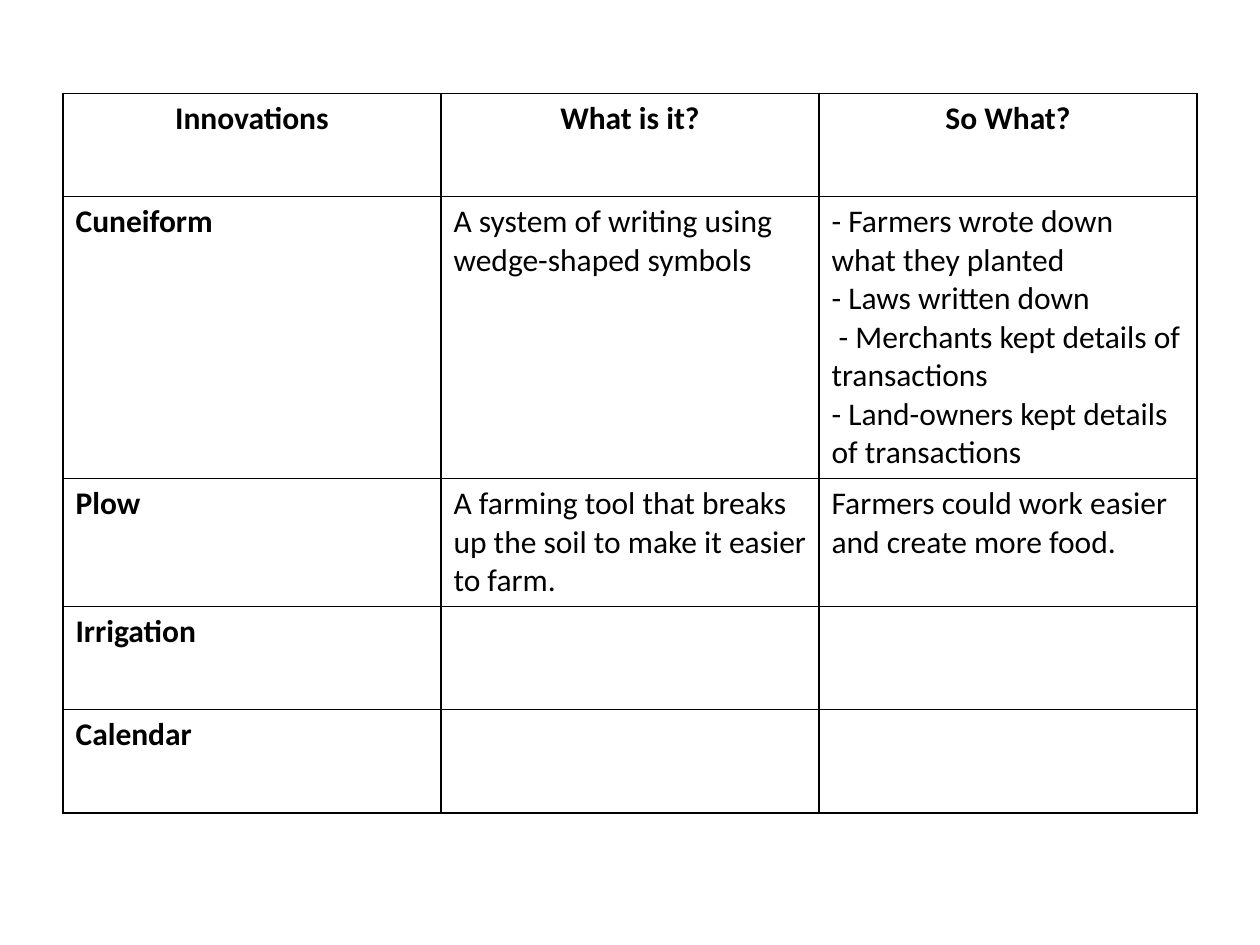
from dataclasses import dataclass

from lxml import etree
from pptx import Presentation
from pptx.dml.color import RGBColor
from pptx.enum import text
from pptx.oxml.ns import qn
from pptx.util import Inches, Pt


@dataclass(frozen=True)
class Theme:
    font: str = "Calibri"
    size: int = 18
    ink: str = "000000"
    border_width: int = 1


THEME = Theme()

HEADINGS = ["Innovations", "What is it?", "So What?"]
INNOVATIONS = [
    ["Cuneiform",
     "A system of writing using wedge-shaped symbols",
     "- Farmers wrote down what they planted\n"
     "- Laws written down\n"
     " - Merchants kept details of transactions\n"
     "- Land-owners kept details of transactions"],
    ["Plow",
     "A farming tool that breaks up the soil to make it easier to farm.",
     "Farmers could work easier and create more food."],
    ["Irrigation", "", ""],
    ["Calendar", "", ""],
]
ROW_HEIGHT = Inches(0.82)
CUNEIFORM_HEIGHT = Inches(1.8)


def write_text(frame, content, bold=False, align=text.PP_ALIGN.LEFT):
    frame.text = content
    for paragraph in frame.paragraphs:
        paragraph.alignment = align
        font = paragraph.font
        for run in paragraph.runs:
            font = run.font
            font.bold = bold
            font.color.rgb = RGBColor.from_string(THEME.ink)
        font.name = THEME.font
        font.size = Pt(THEME.size)


def add_borders(cell):
    """Draw all four sides; borders must precede the fill in the cell's XML."""
    properties = cell._tc.get_or_add_tcPr()
    for position, side in enumerate(("a:lnL", "a:lnR", "a:lnT", "a:lnB")):
        line = etree.Element(qn(side), w=str(Pt(THEME.border_width)))
        fill = etree.SubElement(line, qn("a:solidFill"))
        etree.SubElement(fill, qn("a:srgbClr"), val=THEME.ink)
        properties.insert(position, line)


def add_innovations_table(slide, left, top, width):
    rows = [HEADINGS] + INNOVATIONS
    heights = [CUNEIFORM_HEIGHT if row[0] == "Cuneiform" else ROW_HEIGHT
               for row in rows]
    table = slide.shapes.add_table(len(rows), len(HEADINGS),
                                   left, top, width, sum(heights)).table
    table.horz_banding = False
    for column in table.columns:
        column.width = width // len(HEADINGS)
    for row_index, row in enumerate(rows):
        table.rows[row_index].height = heights[row_index]
        is_heading = row_index == 0
        for column_index, content in enumerate(row):
            cell = table.cell(row_index, column_index)
            cell.fill.background()
            add_borders(cell)
            write_text(cell.text_frame, content,
                       bold=is_heading or column_index == 0,
                       align=text.PP_ALIGN.CENTER if is_heading
                       else text.PP_ALIGN.LEFT)


def main():
    presentation = Presentation()
    presentation.slide_width = Inches(10)
    presentation.slide_height = Inches(7.5)
    blank_layout = presentation.slide_layouts[6]
    slide = presentation.slides.add_slide(blank_layout)
    add_innovations_table(slide, Inches(0.5), Inches(0.74), Inches(9))
    presentation.save("out.pptx")


if __name__ == "__main__":
    main()
